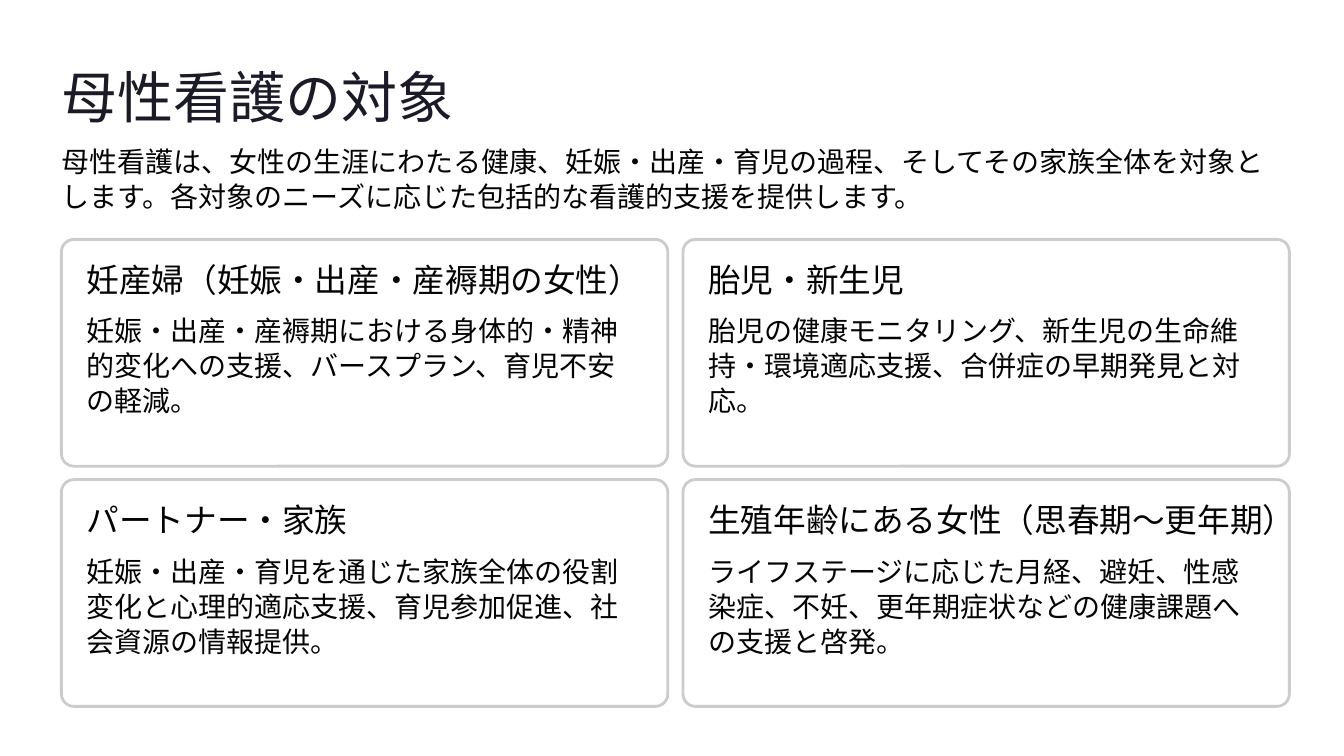
from dataclasses import dataclass

from lxml.etree import SubElement
from pptx import Presentation
from pptx.dml.color import RGBColor
from pptx.enum.shapes import MSO_SHAPE
from pptx.enum.text import MSO_ANCHOR, MSO_AUTO_SIZE, PP_ALIGN
from pptx.oxml.ns import qn
from pptx.util import Pt

TITLE = "母性看護の対象"
INTRO = (
    "母性看護は、女性の生涯にわたる健康、妊娠・出産・育児の過程、そしてその家族全体を対象とします。"
    "各対象のニーズに応じた包括的な看護的支援を提供します。"
)
CARDS = [
    ("妊産婦（妊娠・出産・産褥期の女性）",
     "妊娠・出産・産褥期における身体的・精神的変化への支援、バースプラン、育児不安の軽減。"),
    ("胎児・新生児",
     "胎児の健康モニタリング、新生児の生命維持・環境適応支援、合併症の早期発見と対応。"),
    ("パートナー・家族",
     "妊娠・出産・育児を通じた家族全体の役割変化と心理的適応支援、育児参加促進、社会資源の情報提供。"),
    ("生殖年齢にある女性（思春期～更年期）",
     "ライフステージに応じた月経、避妊、性感染症、不妊、更年期症状などの健康課題への支援と啓発。"),
]


@dataclass(frozen=True)
class TextStyle:
    font: str
    size: float
    leading: float
    color: str
    wrap: bool


@dataclass(frozen=True)
class Theme:
    title: TextStyle = TextStyle("Inter", 48, 118, "1B1B27", False)
    heading: TextStyle = TextStyle("Inter", 28, 29.5, "030303", False)
    body: TextStyle = TextStyle("Cabin", 24, 30, "030303", True)
    card_fill: str = "FFFFFF"
    card_opacity: int = 95
    card_line: str = "CCCCCC"
    card_line_width: float = 2.4


THEME = Theme()

MARGIN, CARDS_TOP = 52.6, 205.2
CARD_W, CARD_H = 519.8, 194.4
GAP_X, GAP_Y = 13, 11.5
COLUMNS = 2
PADDING = 21.6
BODY_OFFSET = 62.6


def place(sp, left, top, width, height):
    sp.left, sp.top, sp.width, sp.height = Pt(left), Pt(top), Pt(width), Pt(height)


def write(sp, text, style):
    tf = sp.text_frame
    tf.text = text
    tf.word_wrap = style.wrap
    tf.auto_size = MSO_AUTO_SIZE.NONE
    tf.vertical_anchor = MSO_ANCHOR.TOP
    tf.margin_left = tf.margin_top = tf.margin_right = tf.margin_bottom = 0
    p = tf.paragraphs[0]
    p.alignment = PP_ALIGN.LEFT
    p.line_spacing = Pt(style.leading)
    p.space_before = Pt(0)
    r = p.runs[0]
    r.font.name, r.font.size = style.font, Pt(style.size)
    r.font.color.rgb = RGBColor.from_string(style.color)
    SubElement(r._r.rPr, qn("a:ea")).set("typeface", style.font)


def add_text(slide, text, style, *box):
    write(slide.shapes.add_textbox(*map(Pt, box)), text, style)


def add_card(slide, left, top, heading, body):
    sp = slide.shapes.add_shape(
        MSO_SHAPE.ROUNDED_RECTANGLE, Pt(left), Pt(top), Pt(CARD_W), Pt(CARD_H))
    sp.adjustments[0] = 0.055
    sp.shadow.inherit = False
    sp.fill.solid()
    sp.fill.fore_color.rgb = RGBColor.from_string(THEME.card_fill)
    color = sp.fill._xPr.find(qn("a:solidFill"))[0]
    SubElement(color, qn("a:alpha")).set("val", str(THEME.card_opacity * 1000))
    sp.line.color.rgb = RGBColor.from_string(THEME.card_line)
    sp.line.width = Pt(THEME.card_line_width)

    text_left, text_w = left + PADDING, CARD_W - 2 * PADDING
    add_text(slide, heading, THEME.heading, text_left, top + PADDING, text_w, 39.6)
    add_text(slide, body, THEME.body, text_left, top + BODY_OFFSET, text_w, 82)


def main():
    prs = Presentation()
    prs.slide_width, prs.slide_height = Pt(1152), Pt(648)
    slide = prs.slides.add_slide(prs.slide_layouts[5])

    place(slide.shapes.title, MARGIN, -7.2, 944.6, 118)
    write(slide.shapes.title, TITLE, THEME.title)
    add_text(slide, INTRO, THEME.body, MARGIN, 122.4, 1046.2, 60.5)

    for i, (heading, body) in enumerate(CARDS):
        row, col = divmod(i, COLUMNS)
        add_card(slide, MARGIN + col * (CARD_W + GAP_X),
                 CARDS_TOP + row * (CARD_H + GAP_Y), heading, body)

    prs.save("out.pptx")


if __name__ == "__main__":
    main()
